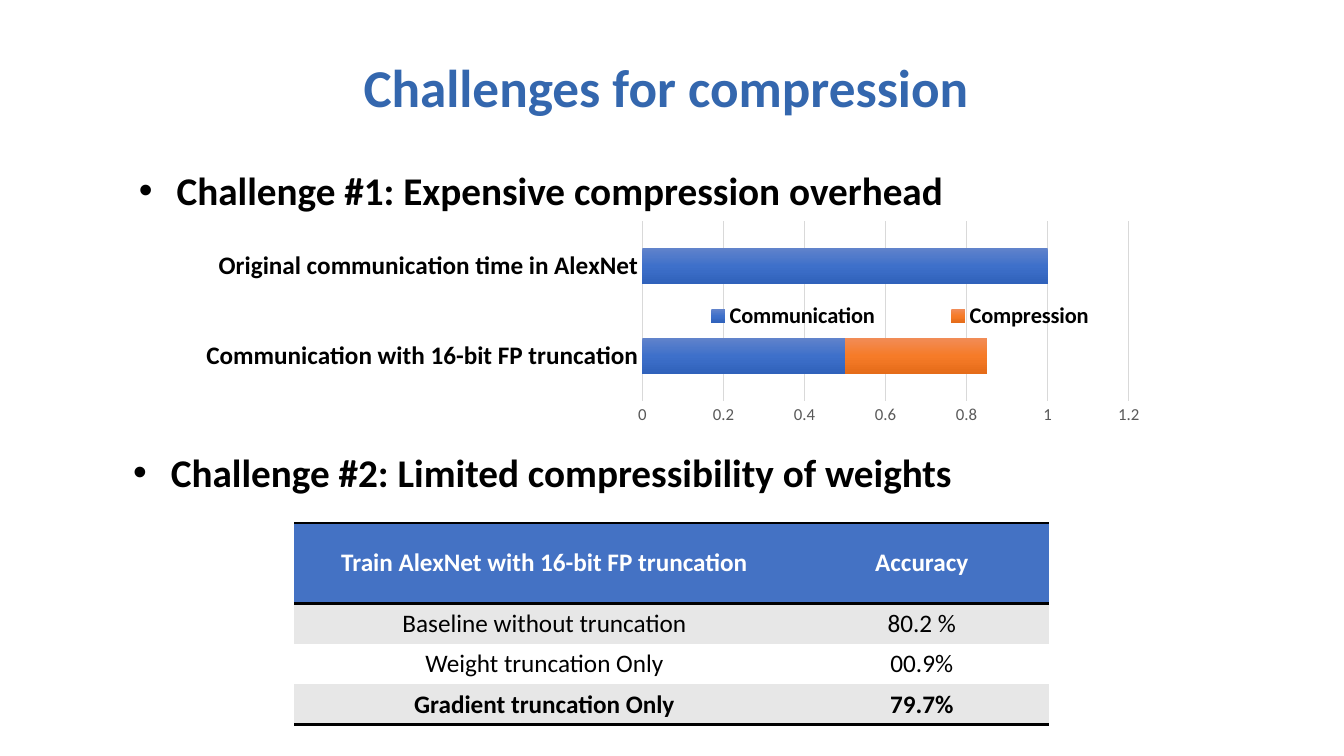
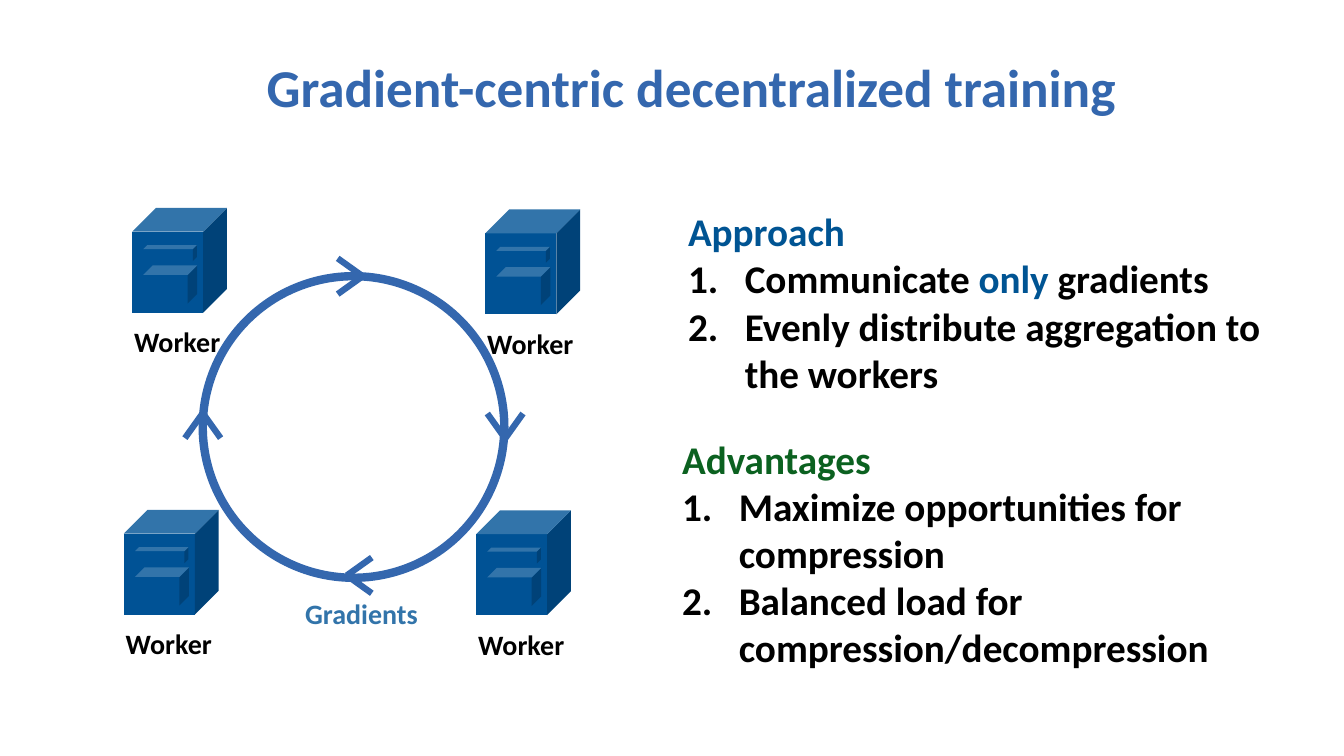
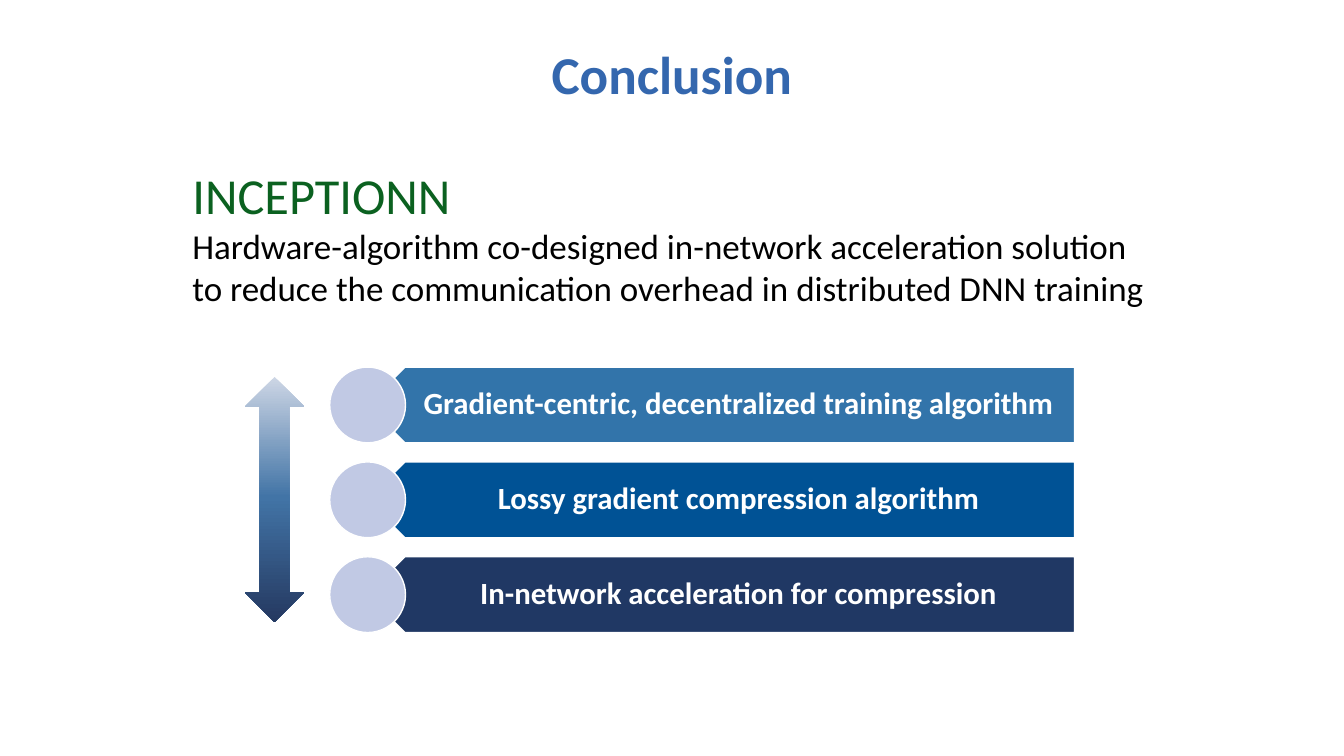
from dataclasses import dataclass

from lxml import etree
from pptx import Presentation
from pptx.chart.data import CategoryChartData
from pptx.dml.color import RGBColor
from pptx.enum.chart import XL_CHART_TYPE as ChartType
from pptx.enum.chart import XL_LEGEND_POSITION as LegendPos
from pptx.enum.chart import XL_TICK_MARK as TickMark
from pptx.enum.shapes import MSO_CONNECTOR as Connector
from pptx.enum.shapes import MSO_SHAPE as Shape
from pptx.enum.text import MSO_ANCHOR as Anchor
from pptx.enum.text import MSO_AUTO_SIZE as AutoSize
from pptx.enum.text import PP_ALIGN as Align
from pptx.oxml.ns import qn
from pptx.util import Cm, Pt

FONT = "Calibri"
COLORS = {
    "black": "000000",
    "white": "FFFFFF",
    "title": "3467AE",
    "approach": "005493",
    "green": "0B6120",
    "light_blue": "3274AA",
    "blue": "005295",
    "dark_blue": "004278",
    "navy": "203864",
    "lavender": "C1C9E4",
    "table_head": "4472C4",
    "band": "E7E7E7",
    "grid": "D9D9D9",
    "axis_text": "595959",
}
BLUE_BAR = [(0, "6183CB"), (50, "3E70CA"), (100, "3062BB")]
ORANGE_BAR = [(0, "F18C57"), (50, "F67B28"), (100, "E56C19")]
ARROW_FADE = [(0, "CDD6E5"), (49, "4274A6"), (100, "253961")]
NO_GRID_STYLE = "{2D5ABB26-0587-4C30-8999-92F81FD0307C}"


@dataclass(frozen=True)
class Box:
    """A rectangle in centimetres."""
    left: float
    top: float
    width: float
    height: float

    def emu(self) -> tuple:
        return Cm(self.left), Cm(self.top), Cm(self.width), Cm(self.height)


@dataclass(frozen=True)
class Span:
    text: str
    color: str = "black"


@dataclass(frozen=True)
class Para:
    spans: tuple
    size: float = 28
    bold: bool = True
    mark: str = ""
    align: Align = Align.LEFT


@dataclass(frozen=True)
class Cuboid:
    """An oblique block, placed in cm from the corner of its server."""
    left: float
    top: float
    width: float
    height: float
    depth: float


@dataclass(frozen=True)
class Chevron:
    """An open arrowhead: its tip in cm and its direction."""
    x: float
    y: float
    dx: int
    dy: int


@dataclass(frozen=True)
class Layer:
    text: str
    color: str


SERVER_BLOCKS = [
    Cuboid(0, 0, 1.79, 2.04, 0.6),
    Cuboid(0.28, 0.94, 1.25, 0.3, 0.1),
    Cuboid(0.28, 1.45, 1.12, 0.72, 0.24),
]
SERVERS = [(3.33, 5.24), (12.23, 5.28), (12, 12.86), (3.12, 12.85)]
CHEVRONS = [
    Chevron(9.14, 6.96, 1, 0),
    Chevron(12.73, 11.05, 0, 1),
    Chevron(5.11, 10.41, 0, -1),
    Chevron(8.74, 14.5, -1, 0),
]
LAYERS = [
    Layer("Gradient-centric, decentralized training algorithm", "light_blue"),
    Layer("Lossy gradient compression algorithm", "blue"),
    Layer("In-network acceleration for compression", "navy"),
]
ACCURACY = [
    ("Train AlexNet with 16-bit FP truncation", "Accuracy"),
    ("Baseline without truncation", "80.2 %"),
    ("Weight truncation Only", "00.9%"),
    ("Gradient truncation Only", "79.7%"),
]


def rgb(name: str) -> RGBColor:
    return RGBColor.from_string(COLORS[name])


def style_font(font, size: float, color: str = "black", bold: bool = False) -> None:
    font.name = FONT
    font.size = Pt(size)
    font.bold = bold
    font.color.rgb = rgb(color)


def set_marker(p, mark: str) -> None:
    """Give a paragraph a bullet ("bullet") or an automatic number ("number")."""
    numbered = mark == "number"
    indent = Cm(1.43 if numbered else 0.95)
    pPr = p._p.get_or_add_pPr()
    pPr.set("marL", str(indent))
    pPr.set("indent", str(-indent))
    if numbered:
        etree.SubElement(pPr, qn("a:buAutoNum"), type="arabicPeriod")
    else:
        etree.SubElement(pPr, qn("a:buFont"), typeface="Arial")
        etree.SubElement(pPr, qn("a:buChar"), char="•")


def add_text(slide, box: Box, paras: list, wrap: bool = True):
    tf = slide.shapes.add_textbox(*box.emu()).text_frame
    tf.word_wrap = wrap
    for i, para in enumerate(paras):
        p = tf.add_paragraph() if i else tf.paragraphs[0]
        p.alignment = para.align
        if para.mark:
            set_marker(p, para.mark)
        for span in para.spans:
            for n, line in enumerate(span.text.split("\n")):
                if n:
                    p.add_line_break()
                r = p.add_run()
                r.text = line
                style_font(r.font, para.size, span.color, para.bold)
    return tf


def add_titled_slide(prs, title: str, left: float = 0, top: float = 1.24, width: float = 33.58):
    slide = prs.slides.add_slide(prs.slide_layouts[5])
    sp = slide.shapes.title
    sp.left, sp.top, sp.width, sp.height = Box(left, top, width, 1.88).emu()
    tf = sp.text_frame
    tf.text = title
    tf.auto_size = AutoSize.NONE
    p = tf.paragraphs[0]
    p.alignment = Align.CENTER
    style_font(p.runs[0].font, 38, "title", True)
    return slide


def paint(sp, fill: str = "", line: str = "", width: float = 1) -> None:
    """Set fill and outline; an empty colour means none."""
    sp.shadow.inherit = False
    if fill:
        sp.fill.solid()
        sp.fill.fore_color.rgb = rgb(fill)
    else:
        sp.fill.background()
    if line:
        sp.line.color.rgb = rgb(line)
        sp.line.width = Pt(width)
    else:
        sp.line.fill.background()


def fill_gradient(fill, element, stops: list) -> None:
    """Fill from top to bottom with any number of stops."""
    fill.gradient()
    fill.gradient_angle = 270
    gs_list = next(element.iter(qn("a:gsLst")))
    for gs in list(gs_list):
        gs_list.remove(gs)
    for percent, color in stops:
        gs = etree.SubElement(gs_list, qn("a:gs"), pos=str(percent * 1000))
        etree.SubElement(gs, qn("a:srgbClr"), val=color)


def set_layout(parent, index: int, inner: bool, **fractions: float) -> None:
    """Place a chart element by fractions of the chart area."""
    for old in parent.findall(qn("c:layout")):
        parent.remove(old)
    layout = etree.Element(qn("c:layout"))
    manual = etree.SubElement(layout, qn("c:manualLayout"))
    if inner:
        etree.SubElement(manual, qn("c:layoutTarget"), val="inner")
    for tag in ("xMode", "yMode"):
        etree.SubElement(manual, qn(f"c:{tag}"), val="edge")
    for tag, value in fractions.items():
        etree.SubElement(manual, qn(f"c:{tag}"), val=str(value))
    parent.insert(index, layout)


def add_time_chart(slide, box: Box) -> None:
    data = CategoryChartData()
    data.categories = ["Communication with 16-bit FP truncation",
                       "Original communication time in AlexNet"]
    data.add_series("Communication", (0.5, 1))
    data.add_series("Compression", (0.35, 0))
    chart = slide.shapes.add_chart(ChartType.BAR_STACKED, *box.emu(), data).chart
    style_font(chart.font, 10)
    chart.has_title = False

    plot = chart.plots[0]
    plot.gap_width, plot.overlap = 150, 100
    plot.vary_by_categories = False
    for series, stops in zip(plot.series, (BLUE_BAR, ORANGE_BAR)):
        fill_gradient(series.format.fill, series._element, stops)

    cat, val = chart.category_axis, chart.value_axis
    for axis in (cat, val):
        axis.major_tick_mark = axis.minor_tick_mark = TickMark.NONE
    style_font(cat.tick_labels.font, 18, bold=True)
    cat.format.line.color.rgb = rgb("grid")
    cat.format.line.width = Pt(1)
    style_font(val.tick_labels.font, 12, "axis_text")
    val.minimum_scale, val.maximum_scale, val.major_unit = 0, 1.2, 0.2
    val.format.line.fill.background()
    val.has_major_gridlines = True
    grid = val.major_gridlines.format.line
    grid.color.rgb = rgb("grid")
    grid.width = Pt(0.75)

    chart.has_legend = True
    legend = chart.legend
    legend.position = LegendPos.BOTTOM
    legend.include_in_layout = False
    style_font(legend.font, 16, bold=True)
    set_layout(legend._element, 1, False, x=0.47, y=0.32, w=0.54, h=0.14)
    set_layout(chart._chartSpace.chart.plotArea, 0, True, x=0.47, y=0.02, w=0.5, h=0.7)


def add_border(cell, side: str) -> None:
    ln = etree.SubElement(cell._tc.get_or_add_tcPr(), qn(f"a:ln{side}"), w=str(Pt(2)))
    fill = etree.SubElement(ln, qn("a:solidFill"))
    etree.SubElement(fill, qn("a:srgbClr"), val=COLORS["black"])


def add_accuracy_table(slide, box: Box) -> None:
    table = slide.shapes.add_table(len(ACCURACY), 2, *box.emu()).table
    table._tbl.tblPr.find(qn("a:tableStyleId")).text = NO_GRID_STYLE
    for column, width in zip(table.columns, (12.6, 6.42)):
        column.width = Cm(width)
    last = len(ACCURACY) - 1
    for i, texts in enumerate(ACCURACY):
        table.rows[i].height = Cm(1 if i else 2.03)
        sides = {0: "TB", last: "B"}.get(i, "")
        background = ("band" if i % 2 else "white") if i else "table_head"
        for cell, text in zip(table.rows[i].cells, texts):
            for side in sides:
                add_border(cell, side)
            cell.fill.solid()
            cell.fill.fore_color.rgb = rgb(background)
            cell.vertical_anchor = Anchor.MIDDLE
            cell.text_frame.text = text
            p = cell.text_frame.paragraphs[0]
            p.alignment = Align.CENTER
            style_font(p.runs[0].font, 18, "black" if i else "white", i in (0, last))


def add_face(slide, points: list, color: str) -> None:
    start, *rest = [(Cm(x), Cm(y)) for x, y in points]
    builder = slide.shapes.build_freeform(*start, scale=1.0)
    builder.add_line_segments(rest, close=True)
    paint(builder.convert_to_shape(), color)


def add_cuboid(slide, x: float, y: float, block: Cuboid) -> None:
    x, y, d = x + block.left, y + block.top, block.depth
    right, front, bottom = x + block.width, y + d, y + d + block.height
    add_face(slide, [(x, front), (right, front), (right, bottom), (x, bottom)], "blue")
    add_face(slide, [(right + d, y), (right, front), (right, bottom),
                     (right + d, bottom - d)], "dark_blue")
    add_face(slide, [(right + d, y), (x + d, y), (x, front), (right, front)], "light_blue")


def add_worker(slide, x: float, y: float) -> None:
    for block in SERVER_BLOCKS:
        add_cuboid(slide, x, y, block)
    label = Para((Span("Worker"),), size=20)
    add_text(slide, Box(x - 0.2, y + 2.82, 2.72, 1.12), [label], wrap=False)


def add_chevron(slide, tip: Chevron, length: float = 0.63, half: float = 0.45) -> None:
    for side in (-half, half):
        tail_x = tip.x - tip.dx * length - tip.dy * side
        tail_y = tip.y - tip.dy * length + tip.dx * side
        line = slide.shapes.add_connector(
            Connector.STRAIGHT, Cm(tail_x), Cm(tail_y), Cm(tip.x), Cm(tip.y))
        line.line.color.rgb = rgb("title")
        line.line.width = Pt(4.5)
        etree.SubElement(line._element.spPr, qn("a:effectLst"))


def add_layer(slide, top: float, layer: Layer, height: float = 1.91) -> None:
    bar = slide.shapes.add_shape(Shape.PENTAGON, *Box(9.25, top, 17.83, height).emu())
    bar.rotation = 180
    paint(bar, layer.color, "white")
    para = Para((Span(layer.text, "white"),), size=22, align=Align.CENTER)
    tf = add_text(slide, Box(9.73, top, 17.35, height), [para])
    tf.vertical_anchor = Anchor.MIDDLE
    tf.margin_left, tf.margin_right = Cm(0.84), Cm(0.43)
    tf.paragraphs[0].line_spacing = 0.9
    dot = slide.shapes.add_shape(Shape.OVAL, *Box(8.31, top, height, height).emu())
    paint(dot, "lavender", "white")


def build_challenges(prs) -> None:
    slide = add_titled_slide(prs, "Challenges for compression")
    for box, text in (
        (Box(2.72, 4.06, 21.82, 1.45), "Challenge #1: Expensive compression overhead"),
        (Box(2.95, 11.18, 21.44, 1.45), "Challenge #2: Limited compressibility of weights"),
    ):
        add_text(slide, box, [Para((Span(text),), mark="bullet", align=Align.CENTER)])
    add_time_chart(slide, Box(4.67, 5.44, 24.51, 6.48))
    add_accuracy_table(slide, Box(7.42, 13.18, 19.02, 5.03))


def build_training(prs) -> None:
    slide = add_titled_slide(prs, "Gradient-centric decentralized training", left=0.64)
    add_text(slide, Box(7.44, 14.91, 3.38, 1.12),
             [Para((Span("Gradients", "light_blue"),), size=20)])
    ring = slide.shapes.add_shape(Shape.OVAL, *Box(5.11, 6.96, 7.6, 7.6).emu())
    paint(ring, line="title", width=6)
    for x, y in SERVERS:
        add_worker(slide, x, y)
    for tip in CHEVRONS:
        add_chevron(slide, tip)
    add_text(slide, Box(17.09, 5.11, 15.6, 6.25), [
        Para((Span("Approach", "approach"),)),
        Para((Span("Communicate "), Span("only", "approach"), Span(" gradients")), mark="number"),
        Para((Span("Evenly distribute aggregation to the workers"),), mark="number"),
    ])
    add_text(slide, Box(16.94, 10.85, 16.9, 7.44), [
        Para((Span("Advantages", "green"),)),
        Para((Span("Maximize opportunities for compression"),), mark="number"),
        Para((Span("Balanced load for compression/decompression"),), mark="number"),
    ])


def build_conclusion(prs) -> None:
    slide = add_titled_slide(prs, "Conclusion", top=0.91, width=33.87)
    summary = ("Hardware-algorithm co-designed in-network acceleration solution\n"
               "to reduce the communication overhead in distributed DNN training")
    add_text(slide, Box(4.6, 4.01, 28.42, 3.94), [
        Para((Span("INCEPTIONN", "green"),), size=36, bold=False),
        Para((Span(summary),), size=25, bold=False),
    ])
    for i, layer in enumerate(LAYERS):
        add_layer(slide, 9.25 + i * 2.39, layer)
    arrow = slide.shapes.add_shape(Shape.UP_DOWN_ARROW, *Box(6.17, 9.5, 1.5, 6.17).emu())
    paint(arrow)
    fill_gradient(arrow.fill, arrow._element, ARROW_FADE)


def main() -> None:
    prs = Presentation()
    prs.slide_width, prs.slide_height = Cm(33.87), Cm(19.05)
    build_challenges(prs)
    build_training(prs)
    build_conclusion(prs)
    prs.save("out.pptx")


if __name__ == "__main__":
    main()
